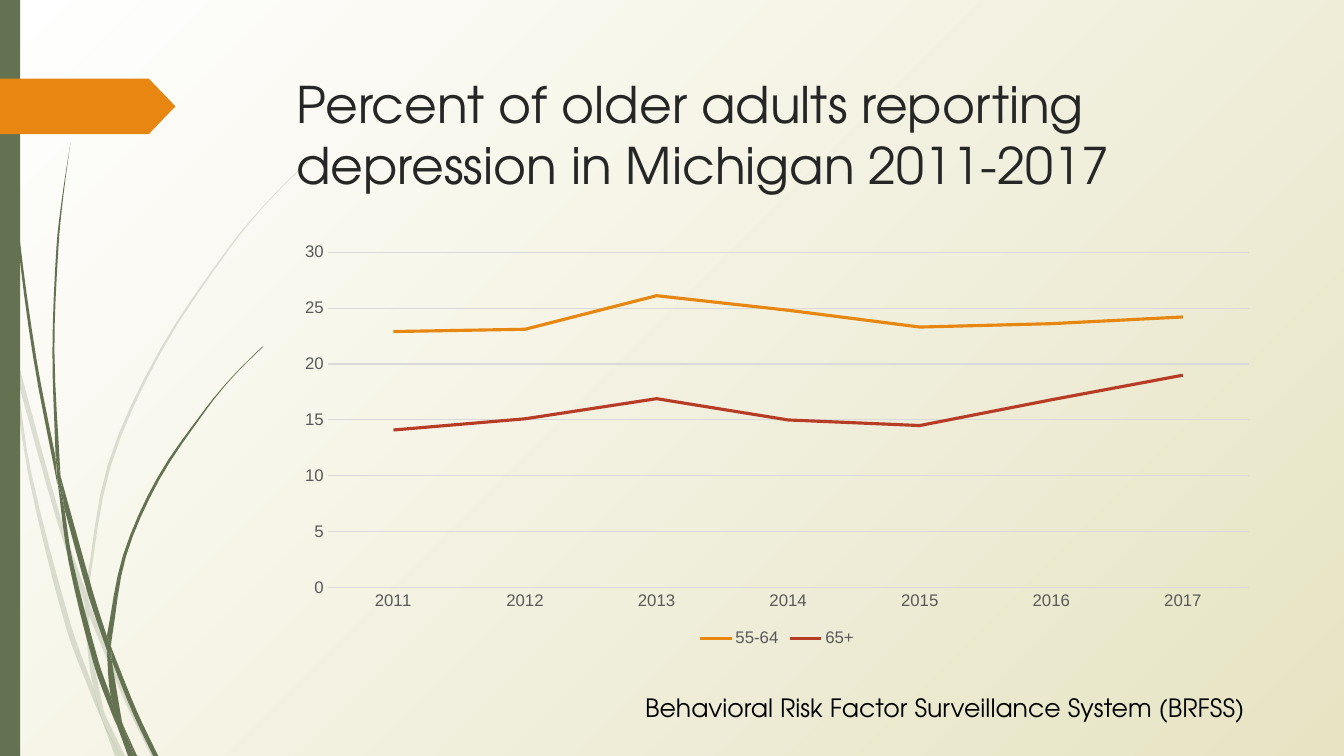
from dataclasses import dataclass
from math import dist

from lxml.etree import SubElement
from pptx import Presentation
from pptx.chart.data import CategoryChartData
from pptx.dml.color import RGBColor as RGB
from pptx.enum.chart import XL_CHART_TYPE as ChartType
from pptx.enum.chart import XL_LEGEND_POSITION as LegendPosition
from pptx.enum.chart import XL_TICK_MARK as TickMark
from pptx.enum.shapes import MSO_SHAPE as Shape
from pptx.oxml.ns import qn
from pptx.util import Inches, Pt


@dataclass(frozen=True)
class Theme:
    green: RGB = RGB.from_string("647252")
    orange: RGB = RGB.from_string("E78712")
    red: RGB = RGB.from_string("B73C26")
    white: RGB = RGB.from_string("FFFFFF")
    cream: RGB = RGB.from_string("E6E4C3")
    ink: RGB = RGB.from_string("262626")
    black: RGB = RGB.from_string("000000")
    label: RGB = RGB.from_string("595959")
    grid: RGB = RGB.from_string("D9D9D9")
    text_font: str = "TeX Gyre Adventor"
    chart_font: str = "Arial"
    title_size: int = 36
    source_size: int = 18
    chart_size: int = 12


THEME = Theme()

# Blades of grass in sections, each with its two edges in drawing order
PALE_GRASS = [
    ([(0.11, 3.5), (0.09, 3.22), (0, 2.82)], [(0, 2.99), (0.1, 3.44)]),
    ([(0.84, 5.99), (0.58, 5.22), (0.17, 3.76)], [(0.14, 3.45), (0.62, 5.2), (0.85, 5.86)]),
    ([(1.5, 7.5), (1.23, 6.94), (0.88, 6.1)],
     [(0.88, 5.96), (0.92, 6.07), (1.27, 6.92), (1.55, 7.5)]),
    ([(1.19, 7.5), (1.24, 7.5)], [(1.05, 7.11)]),
    ([(0.11, 3.5), (0.28, 4.7), (0.65, 6.21), (0.92, 6.93), (1.01, 7.14)],
     [(0.93, 6.83), (0.7, 6.19), (0.31, 4.69), (0.17, 3.76)]),
    ([(0.84, 5.99), (0.87, 6.46), (0.93, 6.83), (1.05, 7.11)],
     [(1.03, 7.06), (0.91, 6.46), (0.88, 6.1)]),
    ([(0.88, 5.96), (0.88, 5.84), (1.1, 4.62), (1.6, 3.49), (2.29, 2.45), (2.68, 1.98), (3.12, 1.54)],
     [(3.12, 1.53), (2.68, 1.97), (2.28, 2.44), (1.58, 3.48), (1.07, 4.61), (0.85, 5.84)]),
    ([(1.01, 7.14), (1.14, 7.5)], [(1.19, 7.5)]),
    ([(0.84, 5.99), (0.88, 6.1)], [(0.88, 5.96), (0.85, 5.86)]),
    ([(0.93, 6.83), (1.01, 7.14), (1.19, 7.5)], [(1.05, 7.11), (0.96, 6.92)]),
]
DARK_GRASS = [
    ([(0.03, 0), (0.07, 1.1), (0.17, 2.33), (0.33, 3.55), (0.57, 4.81)],
     [(0.55, 4.53), (0.36, 3.55), (0.19, 2.32), (0.08, 1.09), (0.04, 0)]),
    ([(1.06, 6.45), (0.88, 5.92), (0.64, 5.05)], [(0.6, 4.72), (0.93, 5.9), (1.06, 6.31)]),
    ([(1.52, 7.5), (1.32, 7.08), (1.11, 6.56)],
     [(1.1, 6.41), (1.13, 6.49), (1.36, 7.06), (1.57, 7.5)]),
    ([(0.57, 4.77), (0.68, 5.57), (0.93, 6.59), (1.11, 7.08), (1.17, 7.22)],
     [(1.1, 6.91), (0.98, 6.57), (0.72, 5.56), (0.64, 5.05)]),
    ([(0.6, 4.72), (0.54, 3.49), (0.58, 2.45), (0.63, 1.93), (0.7, 1.41)],
     [(0.7, 1.41), (0.62, 1.93), (0.56, 2.45), (0.52, 3.49), (0.55, 4.49)]),
    ([(1.33, 7.5), (1.36, 7.5)], [(1.22, 7.19)]),
    ([(0.57, 4.77), (0.64, 5.05)], [(0.6, 4.72), (0.55, 4.49)]),
    ([(1.1, 6.41), (1.11, 6.33), (1.25, 5.52), (1.58, 4.76), (2.05, 4.06), (2.31, 3.74), (2.61, 3.44)],
     [(2.6, 3.44), (2.31, 3.73), (2.04, 4.05), (1.56, 4.74), (1.22, 5.51), (1.06, 6.31)]),
    ([(1.17, 7.22), (1.27, 7.5)], [(1.31, 7.5)]),
    ([(1.06, 6.45), (1.1, 6.91), (1.22, 7.19)], [(1.21, 7.16), (1.11, 6.56)]),
    ([(1.06, 6.45), (1.11, 6.56)], [(1.1, 6.41), (1.06, 6.31)]),
    ([(1.1, 6.91), (1.17, 7.22), (1.3, 7.5)], [(1.33, 7.5), (1.22, 7.19)]),
]

YEARS = [str(year) for year in range(2011, 2018)]
DEPRESSION = {
    "55-64": ((22.9, 23.1, 26.1, 24.8, 23.3, 23.6, 24.2), THEME.orange),
    "65+": ((14.1, 15.1, 16.9, 15, 14.5, 16.8, 19), THEME.red),
}


def paint(shape, color, alpha=None):
    shape.shadow.inherit = False
    shape.fill.solid()
    shape.fill.fore_color.rgb = color
    shape.line.fill.background()
    if alpha is not None:
        tint = shape.element.spPr.find(".//" + qn("a:srgbClr"))
        SubElement(tint, qn("a:alpha"), val=str(alpha * 1000))


def set_font(font, name, size, color):
    font.name, font.size, font.color.rgb = name, Pt(size), color


def smooth(points, steps=4):
    """Points along a smooth curve through the given ones."""
    last = len(points) - 1
    if last < 2:
        return points

    def slope(i):
        a, b = max(i - 1, 0), min(i + 1, last)
        run = sum(dist(points[k], points[k + 1]) for k in range(a, b))
        return [(q - p) / run for p, q in zip(points[a], points[b])]

    curve = [points[0]]
    for i in range(last):
        start, end = points[i], points[i + 1]
        span = dist(start, end)
        for t in (step / steps for step in range(1, steps + 1)):
            curve.append(tuple(
                (2 * t**3 - 3 * t**2 + 1) * p + (3 * t**2 - 2 * t**3) * q
                + span * ((t**3 - 2 * t**2 + t) * m + (t**3 - t**2) * n)
                for p, q, m, n in zip(start, end, slope(i), slope(i + 1))))
    return curve


def add_background(slide):
    fill = slide.background.fill
    fill.gradient()
    for stop, color in zip(fill.gradient_stops, (THEME.white, THEME.cream)):
        stop.color.rgb = color
    # Radial, spreading from the top left corner
    gradient = slide.element.find(".//" + qn("a:gradFill"))
    gradient.remove(gradient.find(qn("a:lin")))
    radial = SubElement(gradient, qn("a:path"), {"path": "circle"})
    SubElement(radial, qn("a:fillToRect"), r="100000", b="100000")


def add_grass(slide, left, top, sections, alpha=None):
    for edge, far_edge in sections:
        outline = [(Inches(left + x), Inches(top + y))
                   for x, y in smooth(edge) + smooth(far_edge)]
        builder = slide.shapes.build_freeform(*outline[0])
        builder.add_line_segments(outline[1:], close=True)
        paint(builder.convert_to_shape(), THEME.green, alpha)


def add_side_decoration(slide, left, top, height):
    add_grass(slide, left, top, PALE_GRASS, alpha=20)
    add_grass(slide, left, top, DARK_GRASS)
    # Side bar and page marker
    bar = slide.shapes.add_shape(Shape.RECTANGLE, Inches(left), Inches(top),
                                 Inches(0.2), Inches(height))
    paint(bar, THEME.green)
    marker = slide.shapes.add_shape(Shape.PENTAGON, Inches(left), Inches(top + 0.78),
                                    Inches(1.74), Inches(0.55))
    marker.adjustments[0] = 0.48
    paint(marker, THEME.orange)


def add_text(slide, box, text, size, color):
    frame = slide.shapes.add_textbox(*map(Inches, box)).text_frame
    frame.word_wrap = True
    frame.text = text
    set_font(frame.paragraphs[0].font, THEME.text_font, size, color)


def add_depression_chart(slide, box):
    data = CategoryChartData()
    data.categories = YEARS
    for age_group, (percents, _) in DEPRESSION.items():
        data.add_series(age_group, percents)
    chart = slide.shapes.add_chart(ChartType.LINE, *map(Inches, box), data).chart
    chart.has_title = False
    set_font(chart.font, THEME.chart_font, THEME.chart_size, THEME.label)
    # Legend
    chart.has_legend = True
    chart.legend.position = LegendPosition.BOTTOM
    chart.legend.include_in_layout = False
    # Axes and gridlines
    years, percent = chart.category_axis, chart.value_axis
    for axis in (years, percent):
        axis.major_tick_mark = axis.minor_tick_mark = TickMark.NONE
    percent.minimum_scale, percent.maximum_scale, percent.major_unit = 0, 30, 5
    percent.format.line.fill.background()
    for line in (years.format.line, percent.major_gridlines.format.line):
        line.color.rgb, line.width = THEME.grid, Pt(0.75)
    # Series
    chart.plots[0].vary_by_categories = False
    for series, (_, color) in zip(chart.plots[0].series, DEPRESSION.values()):
        series.smooth = False
        series.format.line.color.rgb, series.format.line.width = color, Pt(2.25)


def main():
    deck = Presentation()
    deck.slide_width, deck.slide_height = Inches(13.33), Inches(7.5)
    slide = deck.slides.add_slide(deck.slide_layouts[6])
    add_background(slide)
    add_side_decoration(slide, 0, 0, 7.5)
    add_text(slide, (2.84, 0.68, 9.75, 1.4),
             "Percent of older adults reporting depression in Michigan 2011-2017",
             THEME.title_size, THEME.ink)
    add_depression_chart(slide, (2.83, 2.33, 9.75, 4.13))
    add_text(slide, (6.3, 6.82, 6.6, 0.4),
             "Behavioral Risk Factor Surveillance System (BRFSS)",
             THEME.source_size, THEME.black)
    deck.save("out.pptx")


if __name__ == "__main__":
    main()
